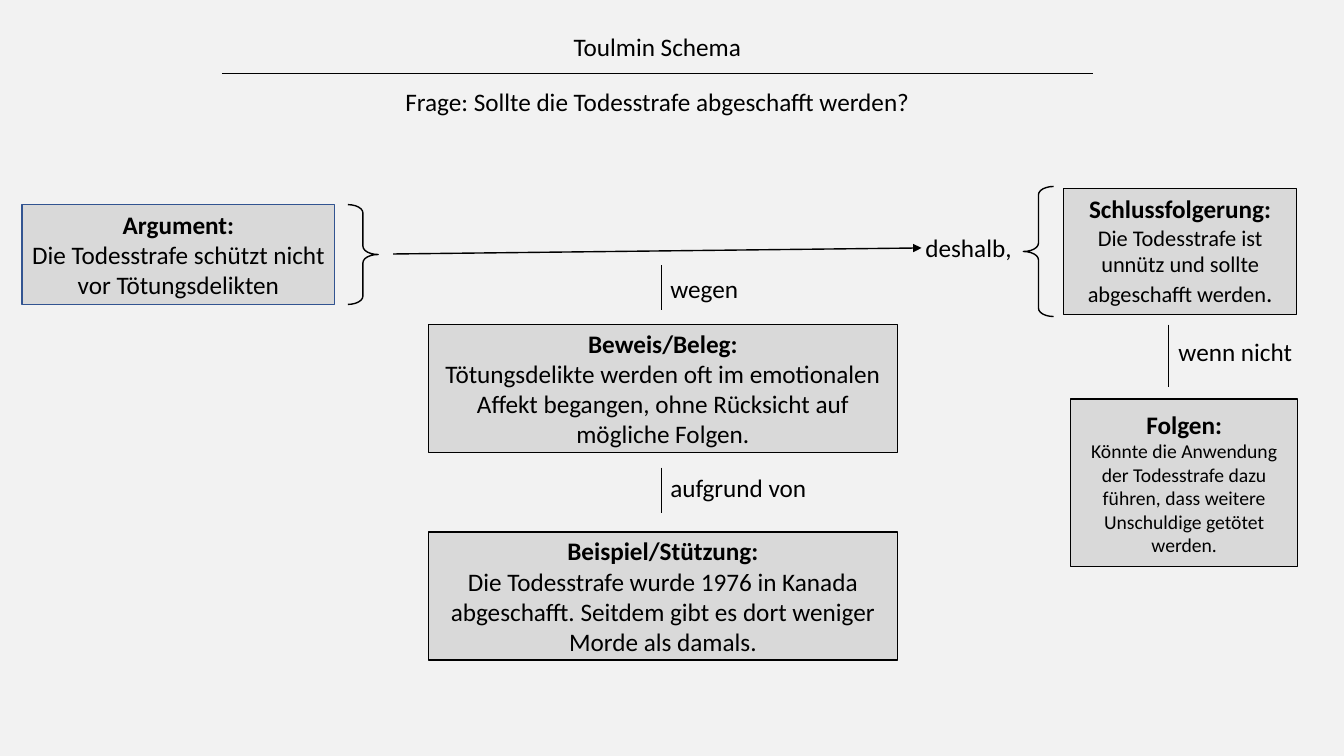
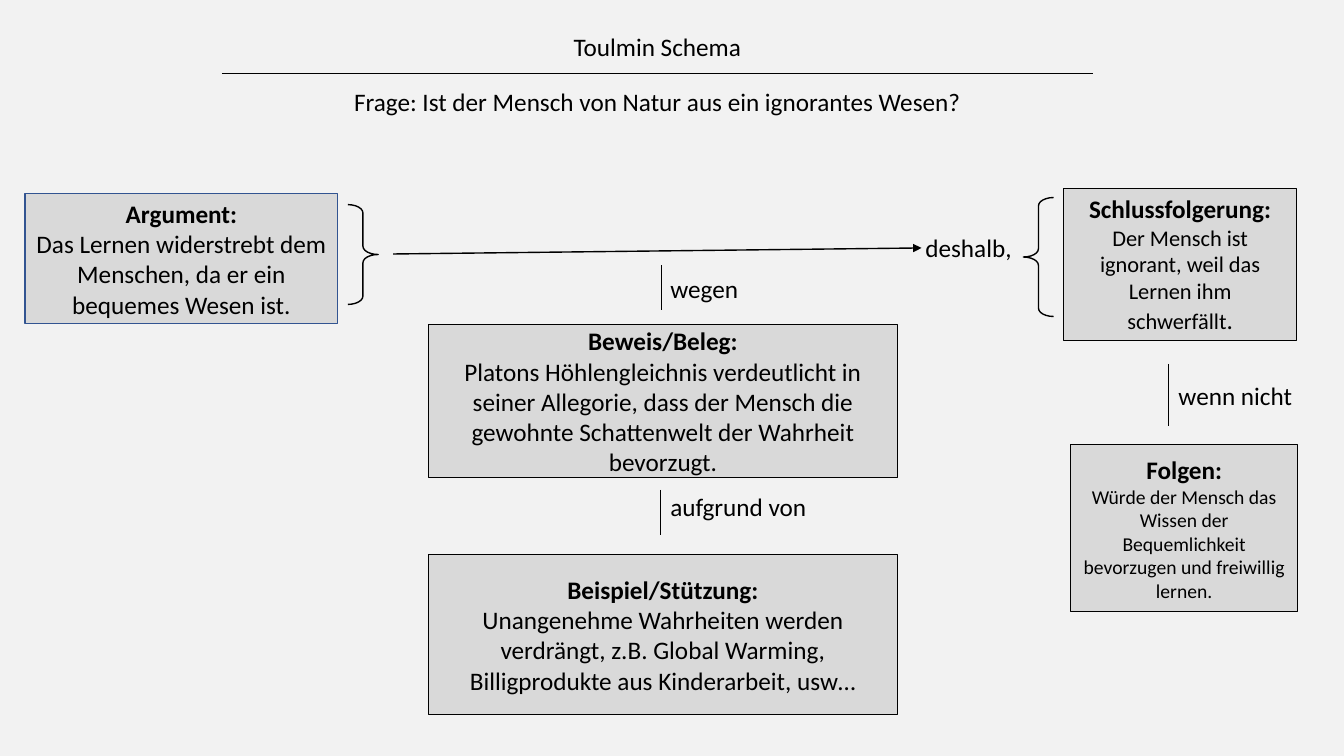
from collections import namedtuple
from dataclasses import dataclass

from lxml import etree
from pptx import Presentation
from pptx.dml.color import RGBColor
from pptx.enum.shapes import MSO_CONNECTOR, MSO_SHAPE
from pptx.enum.text import MSO_ANCHOR, PP_ALIGN
from pptx.oxml.ns import qn
from pptx.util import Pt

PX = 9144  # 100 px to the inch
FONT = "Calibri"
PAPER = RGBColor(0xF2, 0xF2, 0xF2)
GREY = RGBColor(0xD9, 0xD9, 0xD9)
BLUE = RGBColor(0x32, 0x54, 0x91)
BLACK = RGBColor(0x00, 0x00, 0x00)

Box = namedtuple("Box", "left top width height")
HEADER = Box(220, 25, 864, 96)


@dataclass
class Scheme:
    """Texts of one Toulmin scheme and the boxes they stand in."""
    question: str
    argument: str
    argument_box: Box
    conclusion: str
    conclusion_box: Box
    conclusion_brace_top: int
    evidence: str
    evidence_box: Box
    example: str
    example_box: Box
    because_line: tuple
    because_label_top: int
    consequence: str
    consequence_box: Box
    unless_line_top: int
    unless_label_top: int


SCHEMES = [
    Scheme(
        question="Frage: Sollte die Todesstrafe abgeschafft werden?",
        argument="Die Todesstrafe schützt nicht vor Tötungsdelikten",
        argument_box=Box(22, 203, 310, 99),
        conclusion="Die Todesstrafe ist unnütz und sollte abgeschafft werden",
        conclusion_box=Box(1055, 187, 231, 125),
        conclusion_brace_top=185,
        evidence="Tötungsdelikte werden oft im emotionalen Affekt begangen, "
                 "ohne Rücksicht auf mögliche Folgen.",
        evidence_box=Box(425, 322, 465, 127),
        example="Die Todesstrafe wurde 1976 in Kanada abgeschafft. "
                "Seitdem gibt es dort weniger Morde als damals.",
        example_box=Box(425, 528, 465, 127),
        because_line=(656, 464),
        because_label_top=464,
        consequence="Könnte die Anwendung der Todesstrafe dazu führen, "
                    "dass weitere Unschuldige getötet werden.",
        consequence_box=Box(1062, 396, 225, 166),
        unless_line_top=322,
        unless_label_top=329,
    ),
    Scheme(
        question="Frage: Ist der Mensch von Natur aus ein ignorantes Wesen?",
        argument="Das Lernen widerstrebt dem Menschen, da er ein bequemes Wesen ist.",
        argument_box=Box(25, 192, 310, 129),
        conclusion="Der Mensch ist ignorant, weil das Lernen ihm schwerfällt",
        conclusion_box=Box(1055, 187, 231, 151),
        conclusion_brace_top=196,
        evidence="Platons Höhlengleichnis verdeutlicht in seiner Allegorie, "
                 "dass der Mensch die gewohnte Schattenwelt der Wahrheit bevorzugt.",
        evidence_box=Box(425, 322, 465, 152),
        example="Unangenehme Wahrheiten werden verdrängt, z.B. Global Warming, "
                "Billigprodukte aus Kinderarbeit, usw…",
        example_box=Box(425, 550, 465, 159),
        because_line=(655, 486),
        because_label_top=483,
        consequence="Würde der Mensch das Wissen der Bequemlichkeit bevorzugen "
                    "und freiwillig lernen.",
        consequence_box=Box(1062, 441, 225, 166),
        unless_line_top=361,
        unless_label_top=372,
    ),
]


def emu(*lengths):
    return [length * PX for length in lengths]


def style_span(span, size=18, bold=False):
    span.font.name = FONT
    span.font.size = Pt(size)
    span.font.bold = bold
    span.font.color.rgb = BLACK


def add_line(page, start, end, weight=1, arrow=False):
    line = page.shapes.add_connector(MSO_CONNECTOR.STRAIGHT, *emu(*start, *end))
    line.line.color.rgb = BLACK
    line.line.width = Pt(weight)
    if arrow:
        tail = etree.SubElement(line.line._get_or_add_ln(), qn("a:tailEnd"))
        tail.set("type", "triangle")
    etree.SubElement(line._element.spPr, qn("a:effectLst"))


def add_label(page, box, text):
    label = page.shapes.add_textbox(*emu(*box))
    frame = label.text_frame
    frame.word_wrap = False
    frame.text = text
    style_span(frame.paragraphs[0].runs[0])


def add_brace(page, box, kind):
    brace = page.shapes.add_shape(kind, *emu(*box))
    brace.adjustments[0] = 0.275
    brace.adjustments[1] = 0.5
    brace.fill.background()
    brace.line.color.rgb = BLACK
    brace.line.width = Pt(1)
    brace.shadow.inherit = False


def add_card(page, box, heading, body, size=18, outline=BLACK, anchor=MSO_ANCHOR.MIDDLE):
    """Grey card with a bold heading over its body; returns the body paragraph."""
    card = page.shapes.add_shape(MSO_SHAPE.RECTANGLE, *emu(*box))
    card.fill.solid()
    card.fill.fore_color.rgb = GREY
    card.line.color.rgb = outline
    card.line.width = Pt(1)
    card.shadow.inherit = False
    frame = card.text_frame
    frame.word_wrap = True
    frame.vertical_anchor = anchor
    frame.text = heading
    para = frame.add_paragraph()
    para.text = body
    for item in frame.paragraphs:
        item.alignment = PP_ALIGN.CENTER
    style_span(frame.paragraphs[0].runs[0], bold=True)
    style_span(para.runs[0], size)
    return para


def add_header(page, box, question):
    title = page.shapes.add_textbox(*emu(*box))
    frame = title.text_frame
    frame.word_wrap = True
    frame.vertical_anchor = MSO_ANCHOR.BOTTOM
    frame.text = "Toulmin Schema"
    para = frame.add_paragraph()
    para.text = question
    para.space_before = Pt(19.8)  # one line of room for the rule
    for item in frame.paragraphs:
        item.alignment = PP_ALIGN.CENTER
        item.line_spacing = 0.9
        style_span(item.runs[0])
    middle = box.top + box.height // 2
    add_line(page, (box.left, middle), (box.left + box.width, middle), weight=0.5)


def add_argument(page, box, body):
    add_card(page, box, "Argument:", body, outline=BLUE)
    add_brace(page, Box(345, 203, 30, 99), MSO_SHAPE.RIGHT_BRACE)
    add_line(page, (390, 252), (914, 246), arrow=True)


def add_conclusion(page, box, body, brace_top):
    add_label(page, Box(box.left - 147, 226, 107, 40), "deshalb,")
    brace = Box(box.left - 40, brace_top, 30, 314 - brace_top)
    add_brace(page, brace, MSO_SHAPE.LEFT_BRACE)
    para = add_card(page, box, "Schlussfolgerung:", body, size=16, anchor=MSO_ANCHOR.TOP)
    stop = para.add_run()
    stop.text = "."
    style_span(stop)


def add_support(page, scheme):
    """Middle column: evidence above the example that backs it."""
    box = scheme.evidence_box
    add_line(page, (656, box.top - 59), (656, box.top - 14))
    add_label(page, Box(655, box.top - 56, 88, 40), "wegen")
    add_card(page, box, "Beweis/Beleg:", scheme.evidence)
    left, top = scheme.because_line
    add_line(page, (left, top), (left, top + 45))
    add_label(page, Box(655, scheme.because_label_top, 157, 40), "aufgrund von")
    add_card(page, scheme.example_box, "Beispiel/Stützung:", scheme.example)


def add_consequence(page, box, body, line_top, label_top):
    middle = box.left + 97
    add_line(page, (middle, line_top), (middle, line_top + 62))
    add_label(page, Box(middle, label_top, 133, 40), "wenn nicht")
    add_card(page, box, "Folgen:", body, size=14)


def add_scheme(deck, scheme):
    page = deck.slides.add_slide(deck.slide_layouts[6])
    page.background.fill.solid()
    page.background.fill.fore_color.rgb = PAPER
    add_header(page, HEADER, scheme.question)
    add_argument(page, scheme.argument_box, scheme.argument)
    add_conclusion(page, scheme.conclusion_box, scheme.conclusion,
                   scheme.conclusion_brace_top)
    add_support(page, scheme)
    add_consequence(page, scheme.consequence_box, scheme.consequence,
                    scheme.unless_line_top, scheme.unless_label_top)


def main():
    deck = Presentation()
    deck.slide_width, deck.slide_height = emu(1333, 750)
    for scheme in SCHEMES:
        add_scheme(deck, scheme)
    deck.save("out.pptx")


if __name__ == "__main__":
    main()
